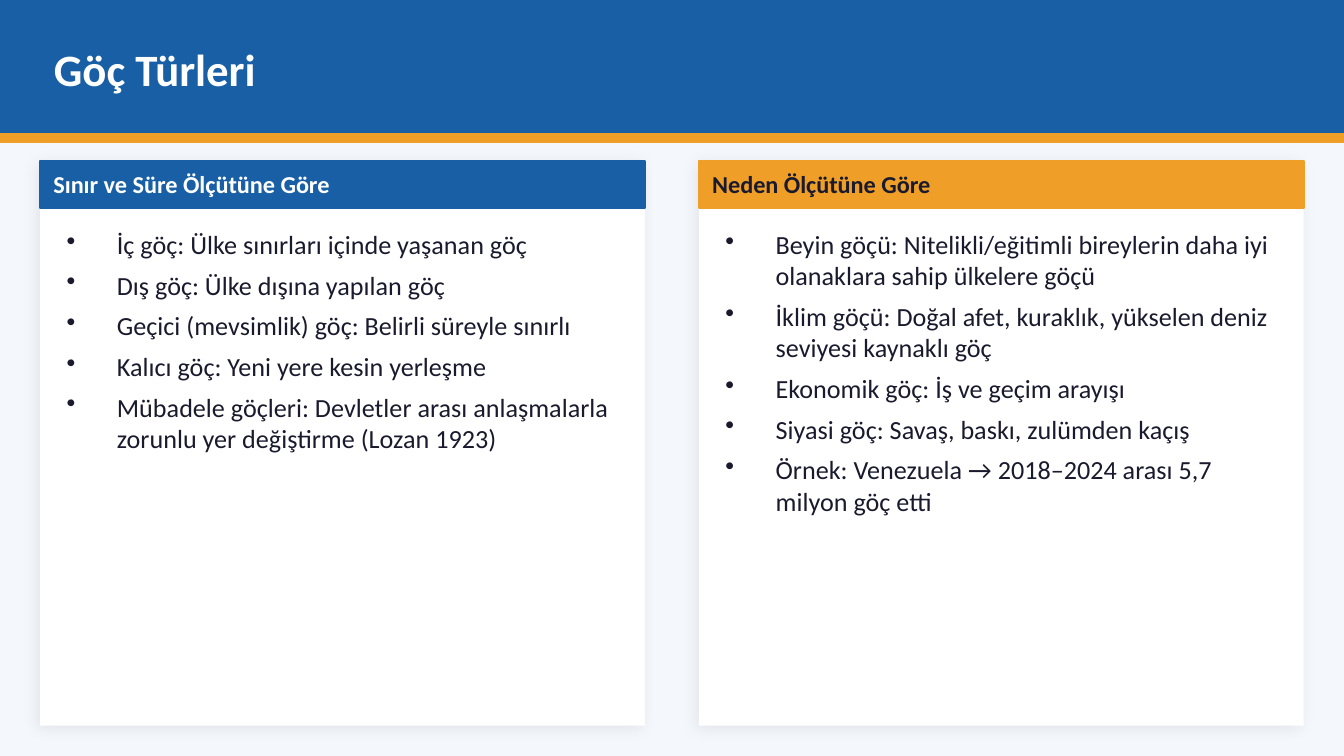
from lxml.etree import SubElement
from pptx import Presentation
from pptx.dml.color import RGBColor
from pptx.enum.shapes import MSO_SHAPE
from pptx.enum.text import MSO_ANCHOR
from pptx.oxml.ns import qn
from pptx.util import Cm, Pt

BLUE = RGBColor(0x18, 0x5F, 0xA5)
ORANGE = RGBColor(0xEF, 0x9F, 0x27)
WHITE = RGBColor(0xFF, 0xFF, 0xFF)
INK = RGBColor(0x1A, 0x1A, 0x2E)
PALE = RGBColor(0xF4, 0xF7, 0xFC)
BLACK = RGBColor(0, 0, 0)

CARD_TOP = 3.05
CARD_WIDTH = 11.43
CARD_PAD = 0.25
TEXT_WIDTH = CARD_WIDTH - 2 * CARD_PAD

COLUMNS = [
    (0.76, "Sınır ve Süre Ölçütüne Göre", BLUE, WHITE, [
        "İç göç: Ülke sınırları içinde yaşanan göç",
        "Dış göç: Ülke dışına yapılan göç",
        "Geçici (mevsimlik) göç: Belirli süreyle sınırlı",
        "Kalıcı göç: Yeni yere kesin yerleşme",
        "Mübadele göçleri: Devletler arası anlaşmalarla zorunlu yer değiştirme (Lozan 1923)",
    ]),
    (13.21, "Neden Ölçütüne Göre", ORANGE, INK, [
        "Beyin göçü: Nitelikli/eğitimli bireylerin daha iyi olanaklara sahip ülkelere göçü",
        "İklim göçü: Doğal afet, kuraklık, yükselen deniz seviyesi kaynaklı göç",
        "Ekonomik göç: İş ve geçim arayışı",
        "Siyasi göç: Savaş, baskı, zulümden kaçış",
        "Örnek: Venezuela → 2018–2024 arası 5,7 milyon göç etti",
    ]),
]


class SlideBuilder:
    font = "Calibri"

    def __init__(self, slide):
        self.slide = slide
        slide.background.fill.solid()
        slide.background.fill.fore_color.rgb = PALE

    def rectangle(self, left, top, width, height, color):
        box = self.slide.shapes.add_shape(
            MSO_SHAPE.RECTANGLE, Cm(left), Cm(top), Cm(width), Cm(height))
        box.shadow.inherit = False
        box.fill.solid()
        box.fill.fore_color.rgb = color
        return box

    def band(self, left, top, width, height, color):
        box = self.rectangle(left, top, width, height, color)
        box.line.color.rgb = color
        box.line.width = Pt(1)

    def card(self, left, top, width, height):
        box = self.rectangle(left, top, width, height, WHITE)
        box.line.fill.background()
        effects = box._element.spPr.find(qn("a:effectLst"))
        shadow = SubElement(
            effects, qn("a:outerShdw"), blurRad=str(Pt(8)), dist=str(Pt(2)),
            dir=str(135 * 60000), algn="bl", rotWithShape="0")
        tint = SubElement(shadow, qn("a:srgbClr"), val=str(BLACK))
        SubElement(tint, qn("a:alpha"), val="8000")

    def text_frame(self, left, top, width, height):
        frame = self.slide.shapes.add_textbox(
            Cm(left), Cm(top), Cm(width), Cm(height)).text_frame
        frame.word_wrap = True
        return frame

    def run(self, paragraph, text, size, color, bold=False):
        run = paragraph.add_run()
        run.text = text
        run.font.name = self.font
        run.font.size = Pt(size)
        run.font.bold = bold
        run.font.color.rgb = color

    def heading(self, left, top, width, height, text, size, color):
        frame = self.text_frame(left, top, width, height)
        frame.margin_left = frame.margin_right = 0
        frame.margin_top = frame.margin_bottom = 0
        frame.vertical_anchor = MSO_ANCHOR.MIDDLE
        self.run(frame.paragraphs[0], text, size, color, bold=True)

    def bullets(self, left, top, width, height, items):
        frame = self.text_frame(left, top, width, height)
        for index, item in enumerate(items):
            paragraph = frame.add_paragraph() if index else frame.paragraphs[0]
            properties = paragraph._p.get_or_add_pPr()
            properties.set("marL", str(Cm(0.95)))
            properties.set("indent", str(-Cm(0.95)))
            SubElement(properties, qn("a:buChar"), char="•")
            paragraph.space_after = Pt(5)
            self.run(paragraph, item, 14, INK)


def main():
    deck = Presentation()
    deck.slide_width = Cm(25.4)
    deck.slide_height = Cm(14.29)
    builder = SlideBuilder(deck.slides.add_slide(deck.slide_layouts[6]))

    builder.band(0, 0, 25.4, 2.54, BLUE)
    builder.band(0, 2.54, 25.4, 0.15, ORANGE)
    builder.heading(1.02, 0.25, 23.37, 2.08, "Göç Türleri", 24, WHITE)

    for left, title, accent, title_color, items in COLUMNS:
        text_left = left + CARD_PAD
        builder.card(left, CARD_TOP, CARD_WIDTH, 10.67)
        builder.band(left, CARD_TOP, CARD_WIDTH, 0.89, accent)
        builder.heading(text_left, 3.1, TEXT_WIDTH, 0.76, title, 13, title_color)
        builder.bullets(text_left, 4.19, TEXT_WIDTH, 9.14, items)

    deck.save("out.pptx")


if __name__ == "__main__":
    main()
